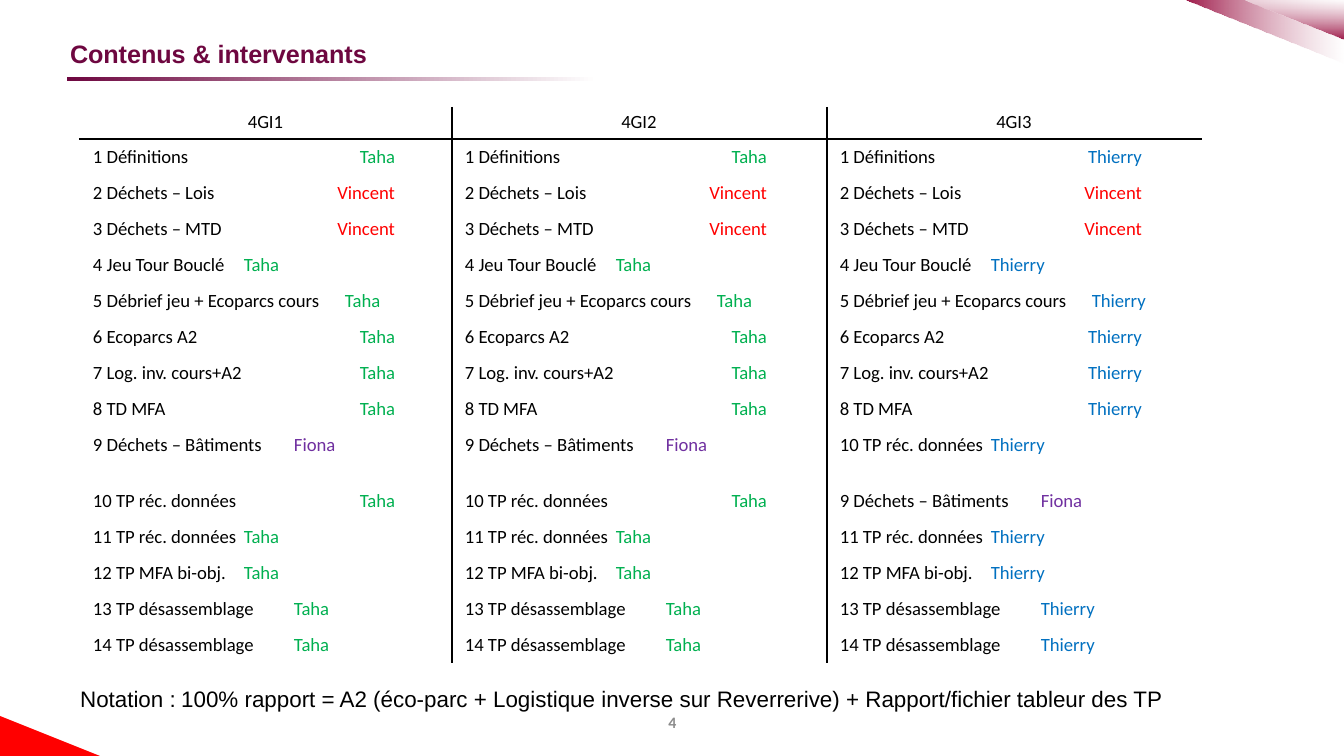
from pptx import Presentation
from pptx.dml.color import RGBColor
from pptx.enum.shapes import MSO_SHAPE as Shape
from pptx.enum.text import MSO_ANCHOR as Anchor, PP_ALIGN as Align
from pptx.oxml.xmlchemy import OxmlElement
from pptx.util import Pt
from lxml.etree import SubElement
from pptx.oxml.ns import qn

THEME = {
    "ink": "000000", "plum": "6E0740", "wine": "9D1747", "white": "FFFFFF",
    "corner": "FF0000", "grey": "8C8C8C", "rule": 1,
    "title": {"name": "Arial", "size": Pt(13.5), "bold": True},
    "note": {"name": "Arial", "size": Pt(12)},
    "number": {"name": "Calibri", "size": Pt(8.5), "bold": True},
    "table": {"name": "Calibri", "size": Pt(10)},
    "Taha": "00B050", "Vincent": "FF0000", "Thierry": "0070C0", "Fiona": "7030A0",
}
TITLE = "Contenus & intervenants"
NOTE = ("Notation :\t100% rapport = A2 (éco-parc + Logistique inverse sur Reverrerive)"
        " + Rapport/fichier tableur des TP")
PAGE = "4"

# Tab stops: distance from the cell text edge in px, and alignment
EDGE, NEAR, MIDDLE, FAR = (302, "r"), (151, "l"), (201, "l"), (252, "l")
SESSIONS = [
    ("1 Définitions", EDGE, "Taha"),
    ("2 Déchets – Lois", EDGE, "Vincent"),
    ("3 Déchets – MTD", EDGE, "Vincent"),
    ("4 Jeu Tour Bouclé", NEAR, "Taha"),
    ("5 Débrief jeu + Ecoparcs cours", FAR, "Taha"),
    ("6 Ecoparcs A2", EDGE, "Taha"),
    ("7 Log. inv. cours+A2", EDGE, "Taha"),
    ("8 TD MFA", EDGE, "Taha"),
    ("9 Déchets – Bâtiments", MIDDLE, "Fiona"),
    ("10 TP réc. données", EDGE, "Taha"),
    ("11 TP réc. données", NEAR, "Taha"),
    ("12 TP MFA bi-obj.", NEAR, "Taha"),
    ("13 TP désassemblage", MIDDLE, "Taha"),
    ("14 TP désassemblage", MIDDLE, "Taha"),
]
# The third group has its own teacher and takes sessions 9 and 10 the other way round
THIRD_ORDER = SESSIONS[:8] + [("10 TP réc. données", NEAR, "Taha"), SESSIONS[8]] + SESSIONS[10:]
THIRD = [(label, stop, "Thierry" if who == "Taha" else who) for label, stop, who in THIRD_ORDER]
GROUPS = {"4GI1": SESSIONS, "4GI2": SESSIONS, "4GI3": THIRD}

TABLE_AT = (79, 107)
COLUMNS = [338, 35, 341, 34, 341, 34]
HEADER_HEIGHT, ROW_HEIGHT, BREAK_HEIGHT, BREAK_ROW = 32, 36, 56, 9
PLAIN_TABLE = "{2D5ABB26-0587-4C30-8999-92F81FD0307C}"


def px(value):
    return round(value * 914400 / 134.4)


def rgb(name):
    return RGBColor.from_string(THEME.get(name, name))


def set_all(target, values):
    for key, value in values.items():
        setattr(target, key, value)


def write(paragraph, text, style, color):
    run = paragraph.add_run()
    run.text = text
    set_all(run.font, THEME[style])
    run.font.color.rgb = rgb(color)


def add_tab(paragraph, position, align):
    tabs = SubElement(paragraph._p.get_or_add_pPr(), qn("a:tabLst"))
    SubElement(tabs, qn("a:tab"), pos=str(px(position)), algn=align)


def fade(shape, color, angle, alpha=100):
    """Gradient from a colour to white; alpha is the opacity of the white end."""
    shape.fill.gradient()
    shape.fill.gradient_angle = angle
    for stop, name, position in zip(shape.fill.gradient_stops, (color, "white"), (0, 1)):
        stop.color.rgb = rgb(name)
        stop.position = position
    if alpha < 100:
        white = list(shape._element.iter(qn("a:srgbClr")))[-1]
        SubElement(white, qn("a:alpha"), val=str(alpha * 1000))


def add_triangle(slide, points):
    (x, y), *rest = [(px(a), px(b)) for a, b in points]
    builder = slide.shapes.build_freeform(x, y)
    builder.add_line_segments(rest, close=True)
    triangle = builder.convert_to_shape()
    triangle.shadow.inherit = False
    triangle.line.fill.background()
    return triangle


def add_decor(slide):
    underline = slide.shapes.add_shape(Shape.RECTANGLE, px(67), px(77), px(530), px(4))
    underline.shadow.inherit = False
    underline.line.fill.background()
    fade(underline, "plum", 0)
    fade(add_triangle(slide, [(1184, 0), (1344, 0), (1344, 64)]), "wine", 0, 47)
    fade(add_triangle(slide, [(1243, 0), (1344, 0), (1344, 40)]), "wine", 90, 57)
    corner = add_triangle(slide, [(0, 716), (100, 756), (0, 756)])
    corner.fill.solid()
    corner.fill.fore_color.rgb = rgb("corner")


def add_text(slide, box, text, style, color, align, tab=None):
    frame = slide.shapes.add_textbox(*map(px, box)).text_frame
    set_all(frame, {"word_wrap": True, "vertical_anchor": Anchor.MIDDLE,
                    "margin_top": 0, "margin_bottom": 0})
    paragraph = frame.paragraphs[0]
    paragraph.alignment = align
    if tab:
        add_tab(paragraph, tab, "l")
    write(paragraph, text, style, color)


def set_borders(cell, row, column):
    """Rules stand between groups and under the header; other sides are cleared."""
    sides = {"L": column in (2, 4), "R": column in (1, 3) or (row == 0 and column in (0, 2)),
             "T": row == 1, "B": row == 0}
    for side, drawn in sides.items():
        line = OxmlElement(f"a:ln{side}")
        if drawn:
            line.set("w", str(Pt(THEME["rule"])))
            fill = SubElement(line, qn("a:solidFill"))
            SubElement(fill, qn("a:srgbClr"), val=THEME["ink"])
        else:
            SubElement(line, qn("a:noFill"))
        cell._tc.get_or_add_tcPr().append(line)


def add_schedule(slide):
    heights = [HEADER_HEIGHT] + [ROW_HEIGHT] * len(SESSIONS)
    heights[BREAK_ROW] = BREAK_HEIGHT
    box = (*TABLE_AT, sum(COLUMNS), sum(heights))
    table = slide.shapes.add_table(len(heights), len(COLUMNS), *map(px, box)).table
    set_all(table, {"first_row": False, "horz_banding": False})
    table._tbl.tblPr.find(qn("a:tableStyleId")).text = PLAIN_TABLE
    for column, width in zip(table.columns, COLUMNS):
        column.width = px(width)
    for row, height in zip(table.rows, heights):
        row.height = px(height)

    for r in range(len(heights)):
        for c in range(len(COLUMNS)):
            cell = table.cell(r, c)
            set_all(cell, {"margin_left": px(14 if c < 2 else 13), "margin_right": px(14),
                           "margin_top": px(7 if r else 4), "margin_bottom": px(4 if r else 3)})
            set_borders(cell, r, c)
            cell.fill.background()
            if c % 2:
                end = SubElement(cell.text_frame.paragraphs[0]._p, qn("a:endParaRPr"))
                end.set("sz", str(int(THEME["table"]["size"].pt * 100)))

    for index, (group, sessions) in enumerate(GROUPS.items()):
        column = 2 * index
        header = table.cell(0, column)
        header.merge(table.cell(0, column + 1))
        heading = header.text_frame.paragraphs[0]
        heading.alignment = Align.CENTER
        write(heading, group, "table", "ink")
        for r, (label, stop, teacher) in enumerate(sessions, 1):
            entry = table.cell(r, column).text_frame.paragraphs[0]
            add_tab(entry, *stop)
            write(entry, label + "\t", "table", "ink")
            write(entry, teacher, "table", teacher)


def main():
    deck = Presentation()
    set_all(deck, {"slide_width": px(1344), "slide_height": px(756)})
    slide = deck.slides.add_slide(deck.slide_layouts[5])
    add_decor(slide)

    title = slide.shapes.title
    set_all(title, {"left": px(56), "top": px(38), "width": px(1210), "height": px(31)})
    set_all(title.text_frame, {"vertical_anchor": Anchor.MIDDLE, "margin_left": px(14),
                               "margin_right": 0, "margin_top": 0, "margin_bottom": 0})
    heading = title.text_frame.paragraphs[0]
    heading.alignment = Align.LEFT
    write(heading, TITLE, "title", "plum")

    add_schedule(slide)
    add_text(slide, (67, 684, 1210, 30), NOTE, "note", "ink", Align.LEFT, tab=101)
    add_text(slide, (460, 702, 425, 40), PAGE, "number", "grey", Align.CENTER)
    deck.save("out.pptx")


if __name__ == "__main__":
    main()
